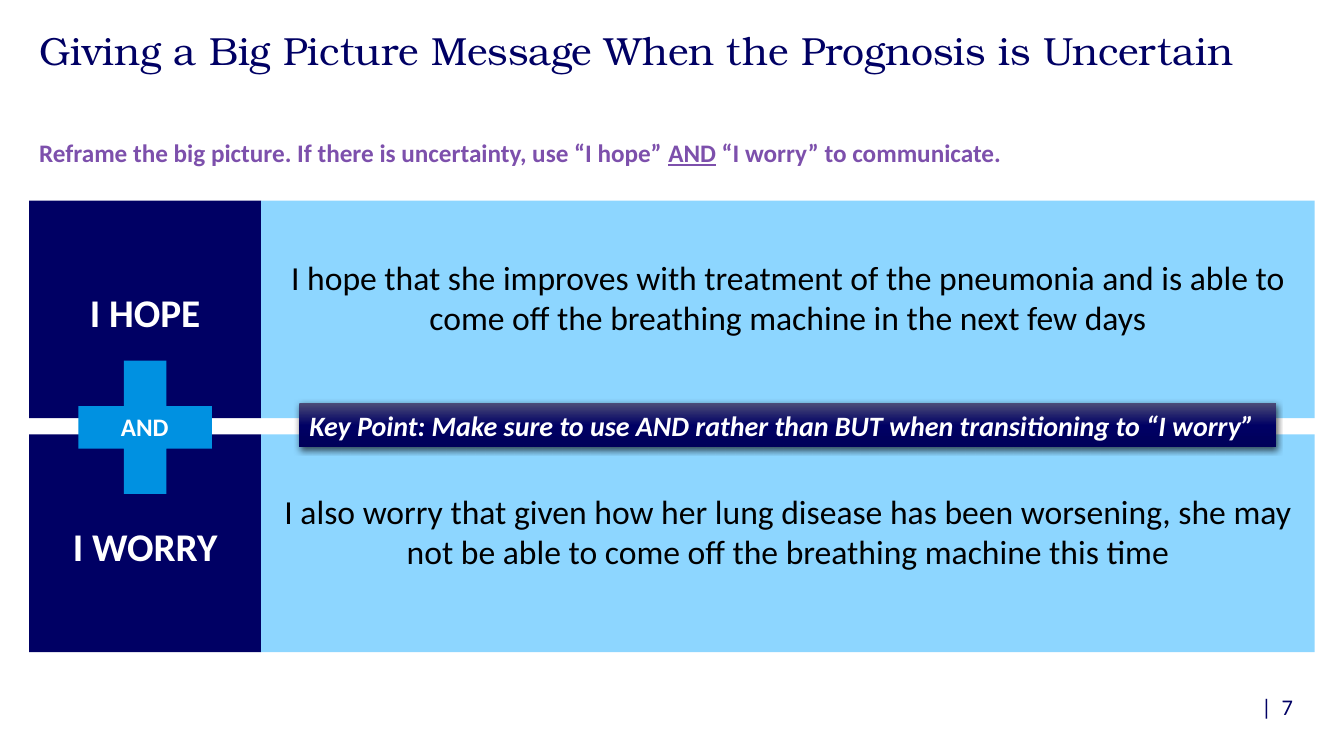
from copy import deepcopy
from dataclasses import dataclass
from typing import NamedTuple

from lxml import etree
from pptx import Presentation
from pptx import util as u
from pptx.dml.color import RGBColor
from pptx.enum import shapes, text
from pptx.oxml.ns import qn

PX = 9144


@dataclass(frozen=True)
class Theme:
    navy: str = "000064"
    purple: str = "7D50AC"
    sky: str = "8DD6FF"
    blue: str = "0091E1"
    white: str = "FFFFFF"
    black: str = "000000"
    banner_stops: tuple = ((0, "4B4B77"), (0.5, "000064"), (1, "000059"))
    title_font: str = "TeX Gyre Bonum"
    body_font: str = "Calibri"
    heading_size: int = 28
    statement_size: int = 24
    banner_size: int = 20
    label_size: int = 18
    number_size: int = 16


class Box(NamedTuple):
    left: int
    top: int
    width: int
    height: int

    def emu(self):
        return [length * PX for length in self]


THEME = Theme()
ALIGN = text.PP_ALIGN
ANCHOR = text.MSO_ANCHOR


def write(shape, words, size, color, font=THEME.body_font, bold=False, italic=False,
          underlined="", align=ALIGN.LEFT, anchor=ANCHOR.TOP,
          insets=(10, 5, 10, 5), wrap=True, spacing=None):
    frame = shape.text_frame
    frame.word_wrap = wrap
    frame.vertical_anchor = anchor
    frame.margin_left, frame.margin_top, frame.margin_right, frame.margin_bottom = [
        inset * PX for inset in insets]
    para = frame.paragraphs[0]
    para.alignment = align
    para.line_spacing = spacing
    before, mark, after = words.partition(underlined) if underlined else (words, "", "")
    for piece in filter(None, (before, mark, after)):
        span = para.add_run()
        span.text = piece
        span.font.name = font
        span.font.size = u.Pt(size)
        span.font.bold = bold
        span.font.italic = italic
        span.font.underline = bool(mark) and piece == mark
        span.font.color.rgb = RGBColor.from_string(color)


def add_text(page, box, words, size, color, **style):
    write(page.shapes.add_textbox(*box.emu()), words, size, color, **style)


def add_block(page, box, color, kind=shapes.MSO_SHAPE.RECTANGLE):
    shape = page.shapes.add_shape(kind, *box.emu())
    shape.shadow.inherit = False
    shape.fill.solid()
    shape.fill.fore_color.rgb = RGBColor.from_string(color)
    shape.line.fill.background()
    return shape


def add_gradient(shape, stops):
    shape.fill.gradient()
    shape.fill.gradient_angle = 270
    stop_list = shape._element.spPr.find(".//" + qn("a:gsLst"))
    while len(stop_list) < len(stops):
        stop_list.append(deepcopy(stop_list[-1]))
    for stop, (position, color) in zip(shape.fill.gradient_stops, stops):
        stop.position = position
        stop.color.rgb = RGBColor.from_string(color)


def add_shadow(shape, color):
    effects = shape._element.spPr.find(qn("a:effectLst"))
    shadow = etree.SubElement(effects, qn("a:outerShdw"), blurRad=str(u.Pt(4.5)),
                              dist=str(u.Pt(1.5)), dir="5400000", rotWithShape="0")
    tone = etree.SubElement(shadow, qn("a:srgbClr"), val=color)
    etree.SubElement(tone, qn("a:alpha"), val="63000")


def add_header(page, box):
    add_text(page, box._replace(height=96),
             "Giving a Big Picture Message When the Prognosis is Uncertain",
             THEME.heading_size, THEME.navy, font=THEME.title_font, spacing=0.9)
    add_text(page, box._replace(top=box.top + 104, height=69),
             "Reframe the big picture. If there is uncertainty, "
             "use “I hope” AND “I worry” to communicate.",
             THEME.label_size, THEME.purple, bold=True, underlined="AND",
             insets=(10, 6, 10, 5))


def add_statement(page, box, label, sentence):
    label_width = 230
    heading = add_block(page, box._replace(width=label_width), THEME.navy)
    write(heading, label, THEME.heading_size, THEME.white, bold=True,
          align=ALIGN.CENTER, anchor=ANCHOR.MIDDLE, insets=(10, 10, 10, 5))
    panel = add_block(page, box._replace(left=box.left + label_width,
                                         width=box.width - label_width), THEME.sky)
    write(panel, sentence, THEME.statement_size, THEME.black,
          align=ALIGN.CENTER, insets=(10, 56, 10, 5))


def add_key_point(page, box):
    banner = add_block(page, box, THEME.navy)
    add_gradient(banner, THEME.banner_stops)
    add_shadow(banner, THEME.black)
    write(banner, "Key Point: Make sure to use AND rather than BUT "
          "when transitioning to “I worry”", THEME.banner_size, THEME.white,
          bold=True, italic=True)


def add_plus(page, box):
    add_block(page, box, THEME.blue, shapes.MSO_SHAPE.MATH_PLUS)
    label = add_block(page, Box(box.left + 56, box.top + 69, 72, 40), THEME.blue)
    write(label, "AND", THEME.label_size, THEME.white, bold=True, wrap=False)


def add_comparison(page, box):
    statements = (
        ("I HOPE", "I hope that she improves with treatment of the pneumonia and "
         "is able to come off the breathing machine in the next few days"),
        ("I WORRY", "I also worry that given how her lung disease has been worsening, "
         "she may not be able to come off the breathing machine this time"),
    )
    gap = 16
    height = (box.height - gap) // 2
    for row, (label, sentence) in enumerate(statements):
        row_box = box._replace(top=box.top + row * (height + gap), height=height)
        add_statement(page, row_box, label, sentence)
    add_key_point(page, Box(box.left + 268, box.top + 201, 969, 44))
    add_plus(page, Box(box.left + 25, box.top + 135, 180, 180))


def add_page_number(page, box):
    add_text(page, box, "|  7", THEME.number_size, THEME.navy,
             anchor=ANCHOR.MIDDLE, insets=(0, 5, 0, 5))


def main():
    deck = Presentation()
    deck.slide_width, deck.slide_height = 1333 * PX, 750 * PX
    page = deck.slides.add_slide(deck.slide_layouts[6])
    add_header(page, Box(29, 26, 1275, 173))
    add_comparison(page, Box(29, 199, 1275, 448))
    add_page_number(page, Box(1251, 677, 65, 48))
    deck.save("out.pptx")


if __name__ == "__main__":
    main()
